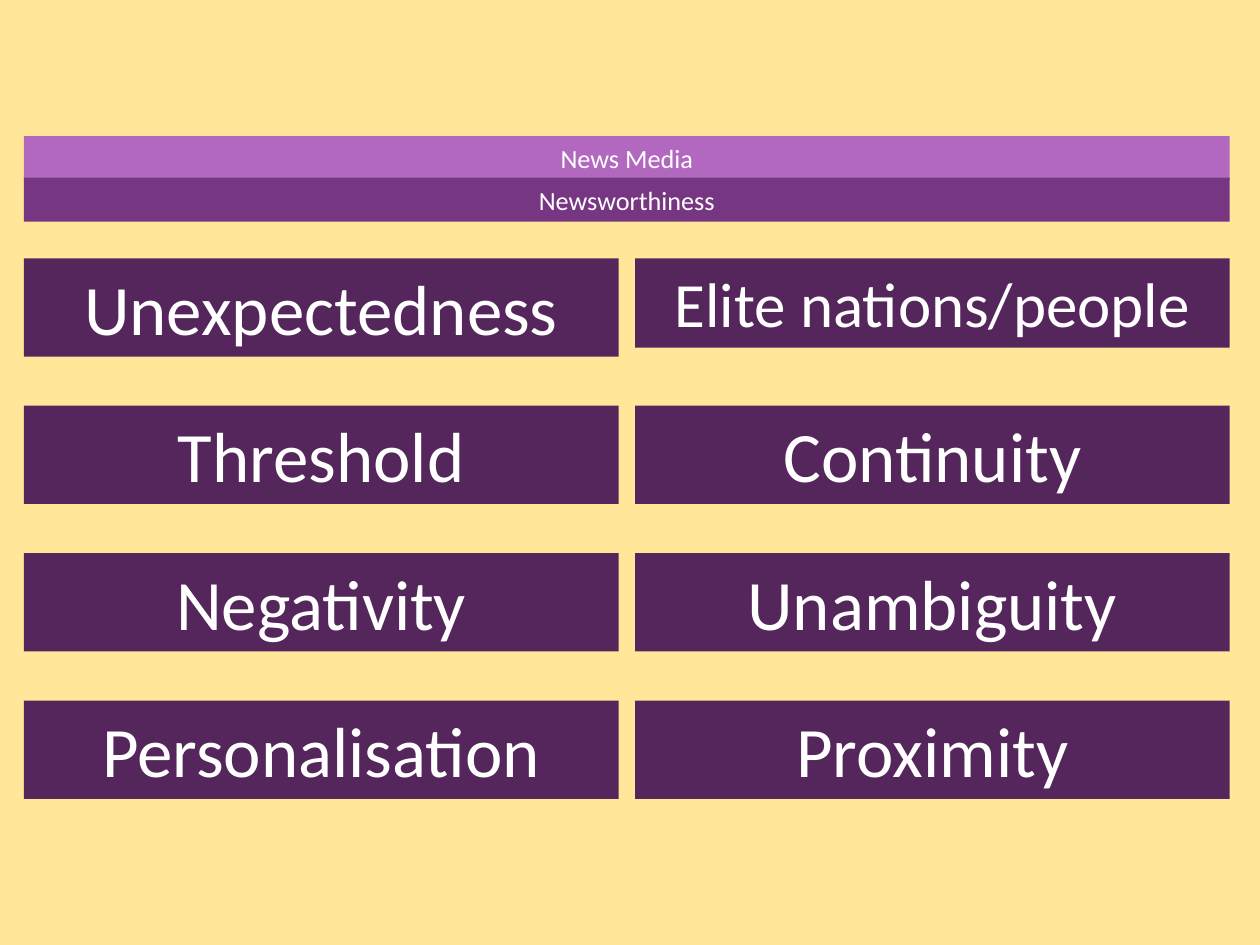
import dataclasses

import pptx
import pptx.dml.color
import pptx.enum.shapes
import pptx.enum.text
import pptx.util
from pptx.util import Inches


@dataclasses.dataclass(frozen=True)
class Theme:
    background: str = "FFE699"
    topic: str = "B368C0"
    subtopic: str = "773682"
    value: str = "54265C"
    text: str = "FFFFFF"
    font: str = "Calibri"
    header_size: float = 15
    value_size: float = 40.5
    long_value_size: float = 36


def rgb(color):
    return pptx.dml.color.RGBColor.from_string(color)


def write_text(text_frame, text, *, size, color, font):
    """Put one centred line of formatted text in a frame."""
    text_frame.word_wrap = True
    text_frame.auto_size = pptx.enum.text.MSO_AUTO_SIZE.SHAPE_TO_FIT_TEXT
    text_frame.vertical_anchor = pptx.enum.text.MSO_ANCHOR.TOP
    paragraph = text_frame.paragraphs[0]
    paragraph.alignment = pptx.enum.text.PP_ALIGN.CENTER
    run = paragraph.add_run()
    run.text = text
    run.font.size = pptx.util.Pt(size)
    run.font.name = font
    run.font.color.rgb = rgb(color)


class SlideBuilder:
    def __init__(self, slide, theme):
        self.slide = slide
        self.theme = theme

    def background(self):
        fill = self.slide.background.fill
        fill.solid()
        fill.fore_color.rgb = rgb(self.theme.background)

    def box(self, text, left, top, width, height, fill, size):
        shape = self.slide.shapes.add_shape(
            pptx.enum.shapes.MSO_SHAPE.RECTANGLE,
            Inches(left), Inches(top), Inches(width), Inches(height))
        shape.shadow.inherit = False
        shape.fill.solid()
        shape.fill.fore_color.rgb = rgb(fill)
        shape.line.fill.background()
        write_text(shape.text_frame, text, size=size,
                   color=self.theme.text, font=self.theme.font)


def main():
    presentation = pptx.Presentation()
    presentation.slide_width = Inches(10)
    presentation.slide_height = Inches(7.5)
    slide = presentation.slides.add_slide(presentation.slide_layouts[6])
    theme = Theme()
    builder = SlideBuilder(slide, theme)
    builder.background()

    # Header bars
    left = 0.19
    headers = [("News Media", 1.08, theme.topic),
               ("Newsworthiness", 1.41, theme.subtopic)]
    for text, top, fill in headers:
        builder.box(text, left, top, 9.57, 0.35, fill, theme.header_size)

    # Two columns of news values
    columns = [
        ["Unexpectedness", "Threshold", "Negativity", "Personalisation"],
        ["Elite nations/people", "Continuity", "Unambiguity", "Proximity"],
    ]
    first_top, row_step, column_step = 2.05, 1.17, 4.85
    for column, values in enumerate(columns):
        for row, text in enumerate(values):
            # A long name takes smaller type and a lower box
            is_long = len(text) > 16
            size = theme.long_value_size if is_long else theme.value_size
            height = 0.71 if is_long else 0.78
            builder.box(text, left + column * column_step,
                        first_top + row * row_step,
                        4.72, height, theme.value, size)

    presentation.save("out.pptx")


if __name__ == "__main__":
    main()
